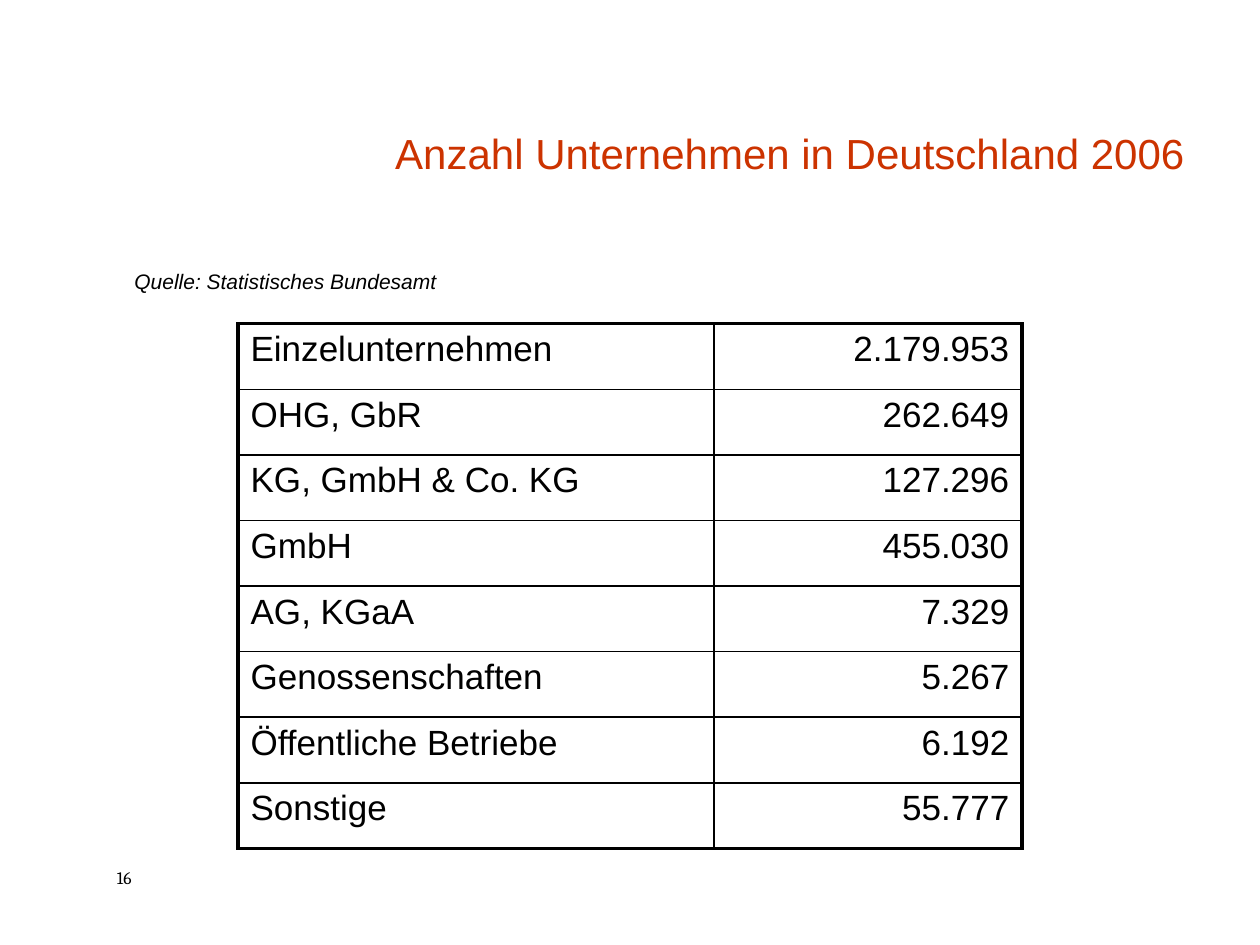
"""Build a slide with a table of German companies by legal form."""
from lxml import etree
from pptx import Presentation
from pptx.dml.color import RGBColor
from pptx.enum.text import MSO_ANCHOR, MSO_AUTO_SIZE, PP_ALIGN
from pptx.oxml.ns import qn
from pptx.util import Pt

LEFT, RIGHT = PP_ALIGN.LEFT, PP_ALIGN.RIGHT
BOTTOM = MSO_ANCHOR.BOTTOM
NO_FIT = MSO_AUTO_SIZE.NONE
BLACK, RED = "000000", "CC3300"
THIN, THICK = 1, 2.25

COMPANIES = [
    ("Einzelunternehmen", "2.179.953"),
    ("OHG, GbR", "262.649"),
    ("KG, GmbH & Co. KG", "127.296"),
    ("GmbH", "455.030"),
    ("AG, KGaA", "7.329"),
    ("Genossenschaften", "5.267"),
    ("Öffentliche Betriebe", "6.192"),
    ("Sonstige", "55.777"),
]


def color(value):
    return RGBColor.from_string(value)


class Page:
    def __init__(self, slide, font="Arial"):
        self.slide = slide
        self.font = font

    def set_text(self, frame, text, size, ink=BLACK, align=LEFT, font=None, italic=False):
        frame.text = text
        paragraph = frame.paragraphs[0]
        paragraph.alignment = align
        for span in paragraph.runs:
            span.font.name = font or self.font
            span.font.size = Pt(size)
            span.font.italic = italic
            span.font.color.rgb = color(ink)

    def title(self, text, left, top, width, height):
        title = self.slide.shapes.title
        title.left, title.top = Pt(left), Pt(top)
        title.width, title.height = Pt(width), Pt(height)
        frame = title.text_frame
        frame.vertical_anchor = BOTTOM
        frame.auto_size = NO_FIT
        self.set_text(frame, text, 24, RED, RIGHT)
        frame.paragraphs[0].line_spacing = 0.9

    def label(self, text, left, top, width, height, size, **style):
        box = self.slide.shapes.add_textbox(Pt(left), Pt(top), Pt(width), Pt(height))
        box.text_frame.word_wrap = True
        self.set_text(box.text_frame, text, size, **style)

    def border(self, cell, widths):
        properties = cell._tc.get_or_add_tcPr()
        for position, (side, width) in enumerate(widths.items()):
            line = etree.Element(qn(f"a:ln{side}"), w=str(Pt(width)))
            fill = etree.SubElement(line, qn("a:solidFill"))
            etree.SubElement(fill, qn("a:srgbClr"), val=BLACK)
            properties.insert(position, line)

    def table(self, rows, left, top, column_widths, row_height):
        count, columns = len(rows), len(column_widths)
        table = self.slide.shapes.add_table(
            count, columns, Pt(left), Pt(top),
            Pt(sum(column_widths)), Pt(row_height * count)).table
        table.first_row = table.horz_banding = False
        for column, width in zip(table.columns, column_widths):
            column.width = Pt(width)
        for i, values in enumerate(rows):
            for j, value in enumerate(values):
                cell = table.cell(i, j)
                cell.fill.background()
                self.set_text(cell.text_frame, value, 20, align=RIGHT if j else LEFT)
                edges = {"L": j == 0, "R": j == columns - 1,
                         "T": i == 0, "B": i == count - 1}
                self.border(cell, {side: THICK if outer else THIN
                                   for side, outer in edges.items()})


def main():
    deck = Presentation()
    deck.slide_width, deck.slide_height = Pt(720), Pt(540)
    page = Page(deck.slides.add_slide(deck.slide_layouts[5]))
    page.label("16", 59.75, 492, 48, 19.5, 10, font="Cambria")
    page.title("Anzahl Unternehmen in Deutschland 2006", 150.5, 30, 533.5, 75.5)
    page.table(COMPANIES, 136, 185, (272, 176), 37.5)
    page.label("Quelle: Statistisches Bundesamt", 69.75, 150, 360, 21.5, 12, italic=True)
    deck.save("out.pptx")


if __name__ == "__main__":
    main()
